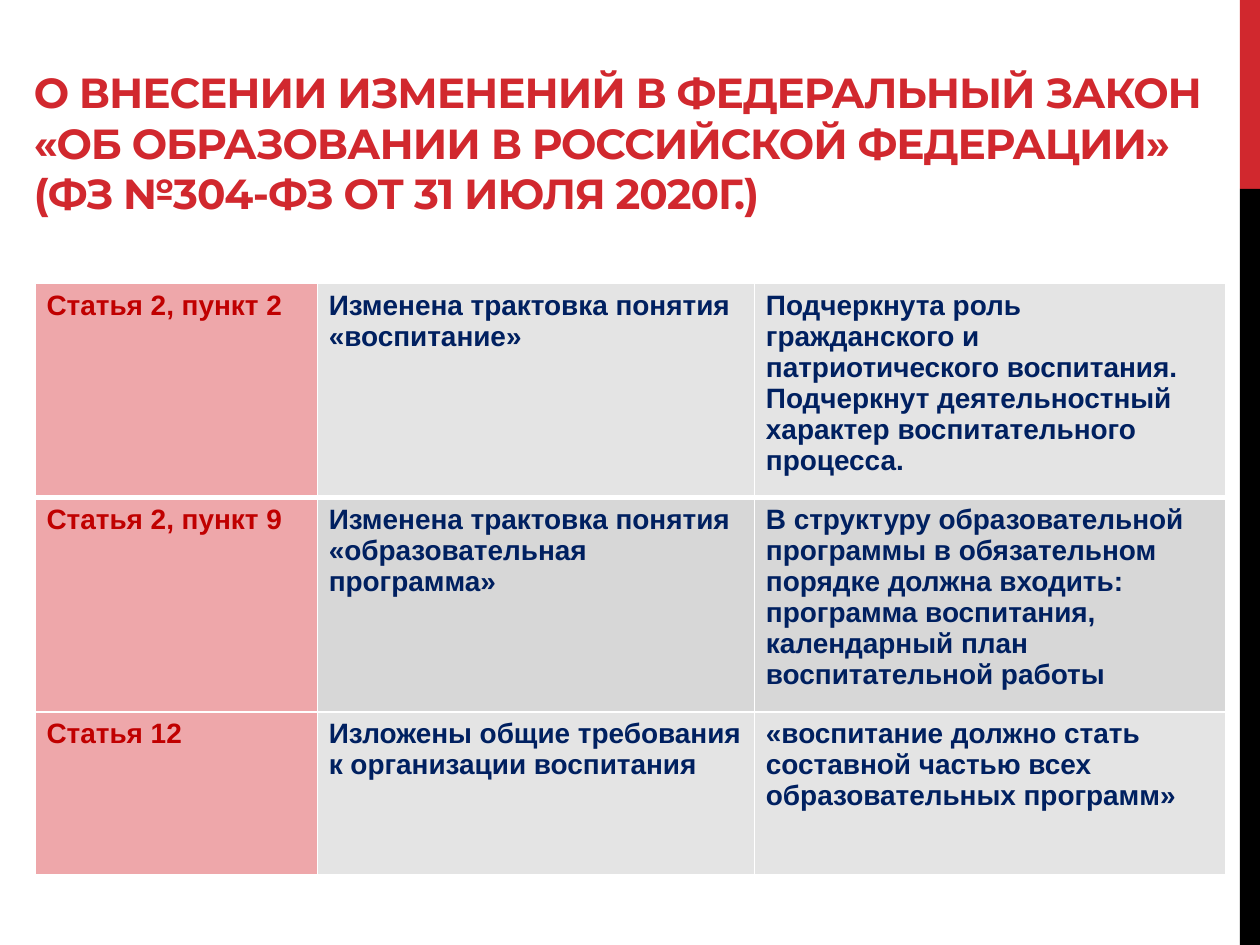
from dataclasses import dataclass

from lxml.etree import SubElement
from pptx import Presentation
from pptx.dml.color import RGBColor
from pptx.enum.shapes import MSO_SHAPE
from pptx.enum.text import MSO_ANCHOR
from pptx.oxml.ns import qn
from pptx.util import Inches, Pt


@dataclass(frozen=True)
class Theme:
    """Colours, fonts and type sizes of the slide."""
    red: str = "D1282E"
    black: str = "000000"
    white: str = "FFFFFF"
    article: str = "C00000"
    body: str = "002060"
    article_fill: str = "EEA7AA"
    bands: tuple = ("E4E4E4", "D7D7D7")
    title_font: str = "Montserrat"
    table_font: str = "Arial"
    title_size: int = 24
    table_size: int = 16
    thin: int = 1
    thick: int = 3


THEME = Theme()
TITLE = (
    "О ВНЕСЕНИИ ИЗМЕНЕНИЙ В ФЕДЕРАЛЬНЫЙ ЗАКОН «ОБ ОБРАЗОВАНИИ В РОССИЙСКОЙ ФЕДЕРАЦИИ»",
    "(ФЗ №304-ФЗ ОТ 31 ИЮЛЯ 2020Г.)",
)
COLUMN_WIDTHS = (2.24, 3.47, 3.74)
ROW_HEIGHTS = (1.52, 1.52, 1.29)
AMENDMENTS = (
    ("Статья 2, пункт 2",
     "Изменена трактовка понятия «воспитание»",
     "Подчеркнута роль гражданского и патриотического воспитания. "
     "Подчеркнут деятельностный характер воспитательного процесса."),
    ("Статья 2, пункт 9",
     "Изменена трактовка понятия «образовательная программа»",
     "В структуру образовательной программы в обязательном порядке должна входить: "
     "программа воспитания, календарный план воспитательной работы"),
    ("Статья 12",
     "Изложены общие требования к организации воспитания",
     "«воспитание должно стать составной частью всех образовательных программ»"),
)


def add_styled_run(paragraph, text, name, size, color):
    """Add a bold run in the given font and colour."""
    run = paragraph.add_run()
    run.text = text
    for key, value in {"name": name, "size": Pt(size), "bold": True}.items():
        setattr(run.font, key, value)
    run.font.color.rgb = RGBColor.from_string(color)
    return run


def add_side_bar(slide, left, top, width, height):
    """Draw the two-colour bar, red for its top fifth."""
    split = height / 5
    parts = ((top, split, THEME.red), (top + split, height - split, THEME.black))
    for part_top, part_height, color in parts:
        bar = slide.shapes.add_shape(
            MSO_SHAPE.RECTANGLE, Inches(left), Inches(part_top), Inches(width), Inches(part_height))
        bar.shadow.inherit = False
        bar.fill.solid()
        bar.fill.fore_color.rgb = RGBColor.from_string(color)
        bar.line.fill.background()


def add_title(slide, left, top, width, height):
    """Place the bottom-anchored heading."""
    box = slide.shapes.add_textbox(Inches(left), Inches(top), Inches(width), Inches(height))
    frame = box.text_frame
    frame.word_wrap = True
    frame.vertical_anchor = MSO_ANCHOR.BOTTOM
    paragraph = frame.paragraphs[0]
    for index, line in enumerate(TITLE):
        if index:
            paragraph.add_line_break()
        run = add_styled_run(paragraph, line, THEME.title_font, THEME.title_size, THEME.red)
        run.font._element.set("spc", "-60")


def set_borders(cell, top, bottom):
    """Give a cell white borders with the given top and bottom weights."""
    properties = cell._tc.get_or_add_tcPr()
    weights = {"a:lnL": THEME.thin, "a:lnR": THEME.thin, "a:lnT": top, "a:lnB": bottom}
    for tag, weight in weights.items():
        line = SubElement(properties, qn(tag), w=str(Pt(weight)))
        fill = SubElement(line, qn("a:solidFill"))
        SubElement(fill, qn("a:srgbClr"), val=THEME.white)


def add_amendments_table(slide, left, top, width, height):
    """Place the table of amended articles."""
    table = slide.shapes.add_table(
        len(AMENDMENTS), len(COLUMN_WIDTHS),
        Inches(left), Inches(top), Inches(width), Inches(height)).table
    table.first_row = table.horz_banding = False
    for column, column_width in zip(table.columns, COLUMN_WIDTHS):
        column.width = Inches(column_width)
    for row_index, (row, texts) in enumerate(zip(table.rows, AMENDMENTS)):
        row.height = Inches(ROW_HEIGHTS[row_index])
        top_weight = THEME.thick if row_index == 1 else THEME.thin
        bottom_weight = THEME.thick if row_index == 0 else THEME.thin
        for column_index, (cell, text) in enumerate(zip(row.cells, texts)):
            band = THEME.bands[row_index % 2]
            color, fill = (THEME.body, band) if column_index else (THEME.article, THEME.article_fill)
            set_borders(cell, top_weight, bottom_weight)
            cell.fill.solid()
            cell.fill.fore_color.rgb = RGBColor.from_string(fill)
            cell.margin_left = cell.margin_right = Inches(0.09)
            paragraph = cell.text_frame.paragraphs[0]
            add_styled_run(paragraph, text, THEME.table_font, THEME.table_size, color)


def main():
    """Build and save the presentation."""
    presentation = Presentation()
    presentation.slide_width, presentation.slide_height = Inches(10), Inches(7.5)
    slide = presentation.slides.add_slide(presentation.slide_layouts[6])
    add_side_bar(slide, 9.84, 0, 0.16, 7.5)
    add_title(slide, 0.17, 0.21, 9.55, 1.57)
    add_amendments_table(slide, 0.28, 2.25, sum(COLUMN_WIDTHS), sum(ROW_HEIGHTS))
    presentation.save("out.pptx")


if __name__ == "__main__":
    main()
